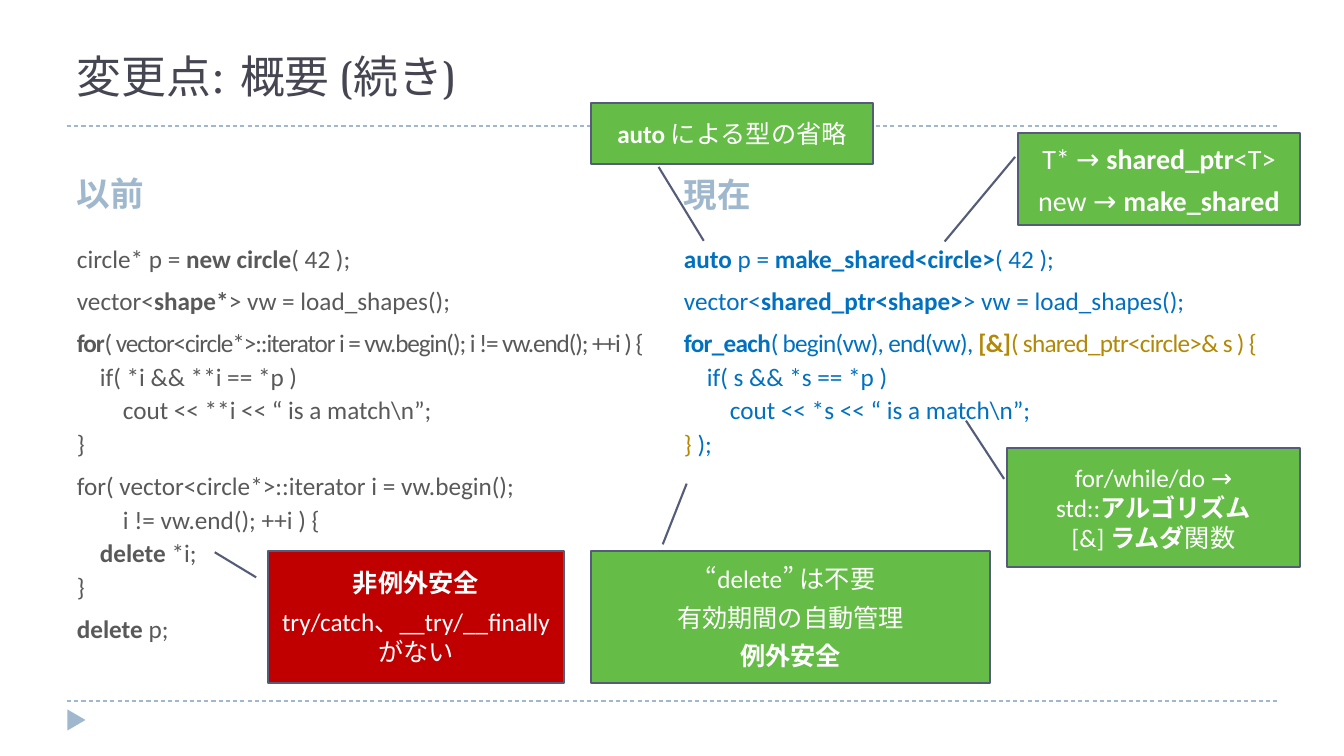
from lxml import etree
from pptx import Presentation
from pptx.dml.color import RGBColor
from pptx.enum.dml import MSO_LINE
from pptx.enum.lang import MSO_LANGUAGE_ID
from pptx.enum.shapes import MSO_CONNECTOR, MSO_SHAPE
from pptx.enum.text import MSO_ANCHOR, PP_ALIGN
from pptx.oxml.ns import qn
from pptx.util import Emu, Pt

CALLOUT, TRIANGLE = MSO_SHAPE.LINE_CALLOUT_1, MSO_SHAPE.ISOSCELES_TRIANGLE
STRAIGHT, DASH = MSO_CONNECTOR.STRAIGHT, MSO_LINE.DASH
TOP, MIDDLE, BOTTOM = MSO_ANCHOR.TOP, MSO_ANCHOR.MIDDLE, MSO_ANCHOR.BOTTOM
LEFT, CENTER = PP_ALIGN.LEFT, PP_ALIGN.CENTER
JAPANESE = MSO_LANGUAGE_ID.JAPANESE

PX_PER_INCH = 100.8
INDENT = 23  # px per level of code
PALE, INK, GREY, BLUE, GOLD = "9FB8CD", "464653", "595959", "0070C0", "B38807"
GREEN, RED, EDGE, WHITE = "65BC46", "C00000", "545C79", "FFFFFF"

# A run is (text, style names); a line is (level, space before, letter spacing, runs).
RUN_STYLES = {
    "plain": {},
    "bold": {"bold": True},
    "arrow": {"name": "Karla"},
    "gold": {"color": GOLD},
}
BEFORE = [
    (0, 6, 0, [("circle* p = ", "plain"), ("new circle", "bold"), ("( 42 );", "plain")]),
    (0, 6, 0, [("vector<", "plain"), ("shape*", "bold"), ("> vw = load_shapes();", "plain")]),
    (0, 6, -0.8, [("for", "bold"),
                  ("( vector<circle*>::iterator i = vw.begin(); i != vw.end(); ++i ) {", "plain")]),
    (1, 0, 0, [("if( *i && **i == *p )", "plain")]),
    (2, 0, 0, [("cout << **i << “ is a match\\n”;", "plain")]),
    (0, 0, 0, [("}", "plain")]),
    (0, 6, 0, [("for( vector<circle*>::iterator i = vw.begin();", "plain")]),
    (2, 0, 0, [("i != vw.end(); ++i ) {", "plain")]),
    (1, 0, 0, [("delete", "bold"), (" *i;", "plain")]),
    (0, 0, 0, [("}", "plain")]),
    (0, 6, 0, [("delete ", "bold"), ("p;", "plain")]),
]
NOW = [
    (0, 6, 0, [("auto ", "bold"), ("p = ", "plain"), ("make_shared<circle>", "bold"),
               ("( 42 );", "plain")]),
    (0, 6, 0, [("vector<", "plain"), ("shared_ptr<shape>", "bold"),
               ("> vw = load_shapes();", "plain")]),
    (0, 6, -0.5, [("for_each", "bold"), ("( begin(vw), end(vw), ", "plain"),
                  ("[&]", "bold gold"), ("( shared_ptr<circle>& s ) {", "gold")]),
    (1, 0, 0, [("if( s && *s == *p )", "plain")]),
    (2, 0, 0, [("cout << *s << “ is a match\\n”;", "plain")]),
    (0, 0, 0, [("} ", "gold"), (");", "plain")]),
]
# box, lines, anchor, line spacing in points, font
TEXTS = [
    ((67, 25, 1210, 101), [(0, 0, 0, [("変更点: 概要 (続き)", "plain")])], MIDDLE, None,
     {"size": 32, "name": "TeX Gyre Bonum", "color": INK}),
    ((67, 142, 594, 76), [(0, 6, 0, [("以前", "bold")])], BOTTOM, None,
     {"size": 24, "color": PALE}),
    ((674, 143, 612, 76), [(0, 6, 0, [("現在", "bold")])], BOTTOM, None,
     {"size": 24, "color": PALE}),
    ((67, 235, 594, 464), BEFORE, TOP, 24, {"size": 18, "color": GREY}),
    ((674, 235, 612, 313), NOW, TOP, 24, {"size": 18, "color": BLUE}),
]
# box, pointer (y1, x1, y2, x2 as shares of the box), fill, text size, lines
CALLOUTS = [
    ((1018, 133, 282, 92), (0.26, -0.01, 1.18, -0.26), GREEN, 20, [
        (0, 6, 0, [("T* ", "plain"), ("→ ", "arrow"), ("shared_ptr", "bold"), ("<T>", "plain")]),
        (0, 6, 0, [("new ", "plain"), ("→ ", "arrow"), ("make_shared", "bold")])]),
    ((591, 551, 399, 132), (-0.05, 0.18, -0.51, 0.24), GREEN, 18, [
        (0, 6, 0, [("“delete” は不要", "plain")]),
        (0, 6, 0, [("有効期間の自動管理", "plain")]),
        (0, 6, 0, [("例外安全", "bold")])]),
    ((1007, 448, 293, 119), (0.26, -0.01, -0.23, -0.14), GREEN, 18, [
        (0, 6, 0, [("for/while/do ", "plain"), ("→", "arrow")]),
        (0, 0, 0, [("std::", "plain"), ("アルゴリズム", "bold")]),
        (0, 0, 0, [("[&] ", "plain"), ("ラムダ", "bold"), ("関数", "plain")])]),
    ((591, 103, 282, 61), (1.05, 0.24, 2.26, 0.4), GREEN, 18, [
        (0, 6, 0, [("auto", "bold"), (" による型の省略", "plain")])]),
    ((268, 551, 296, 132), (0.2, -0.04, 0.01, -0.18), RED, 18, [
        (0, 6, 0, [("非例外安全", "bold")]),
        (0, 6, 0, [("try/catch、__try/__finally がない", "plain")])]),
]
RULES_Y = (701, 126)
RULE_X = (67, 1277)
MARKER = (66, 711, 21, 18)


def px(n):
    return Emu(round(n * 914400 / PX_PER_INCH))


def rgb(color):
    return RGBColor.from_string(color)


def format_run(r, formats):
    for key, value in formats.items():
        if key == "color":
            r.font.color.rgb = rgb(value)
        else:
            setattr(r.font, key, Pt(value) if key == "size" else value)


def write(tf, lines, font, anchor, align, line_spacing=None):
    tf.word_wrap = True
    tf.vertical_anchor = anchor
    base = {"name": "Calibri", "bold": False, "language_id": JAPANESE, **font}
    for i, (level, before, spacing, runs) in enumerate(lines):
        p = tf.paragraphs[0] if i == 0 else tf.add_paragraph()
        p.alignment = align
        p.space_before = Pt(before)
        if line_spacing:
            p.line_spacing = Pt(line_spacing)
        if level:
            p._p.get_or_add_pPr().set("marL", str(px(level * INDENT)))
        for text, styles in runs:
            r = p.add_run()
            r.text = text
            format_run(r, base)
            for style in styles.split():
                format_run(r, RUN_STYLES[style])
            if spacing:
                r._r.get_or_add_rPr().set("spc", str(round(spacing * 100)))


def add_filled(s, kind, box, fill):
    sp = s.shapes.add_shape(kind, *map(px, box))
    sp.shadow.inherit = False
    sp.fill.solid()
    sp.fill.fore_color.rgb = rgb(fill)
    return sp


def add_rule(s, y):
    rule = s.shapes.add_connector(STRAIGHT, px(RULE_X[0]), px(y), px(RULE_X[1]), px(y))
    rule.line.color.rgb = rgb(PALE)
    rule.line.width = Pt(0.75)
    rule.line.dash_style = DASH
    etree.SubElement(rule._element.spPr, qn("a:effectLst"))


def add_callout(s, box, pointer, fill, size, lines):
    sp = add_filled(s, CALLOUT, box, fill)
    for i, share in enumerate(pointer):
        sp.adjustments[i] = share
    sp.line.color.rgb = rgb(EDGE)
    sp.line.width = Pt(1.5)
    write(sp.text_frame, lines, {"size": size, "color": WHITE}, MIDDLE, CENTER)


def main():
    prs = Presentation()
    prs.slide_width, prs.slide_height = px(1344), px(756)
    s = prs.slides.add_slide(prs.slide_layouts[6])
    for y in RULES_Y:
        add_rule(s, y)
    marker = add_filled(s, TRIANGLE, MARKER, PALE)
    marker.rotation = 90
    marker.line.fill.background()
    for box, lines, anchor, line_spacing, font in TEXTS:
        tf = s.shapes.add_textbox(*map(px, box)).text_frame
        write(tf, lines, font, anchor, LEFT, line_spacing)
    for callout in CALLOUTS:
        add_callout(s, *callout)
    prs.save("out.pptx")


if __name__ == "__main__":
    main()
